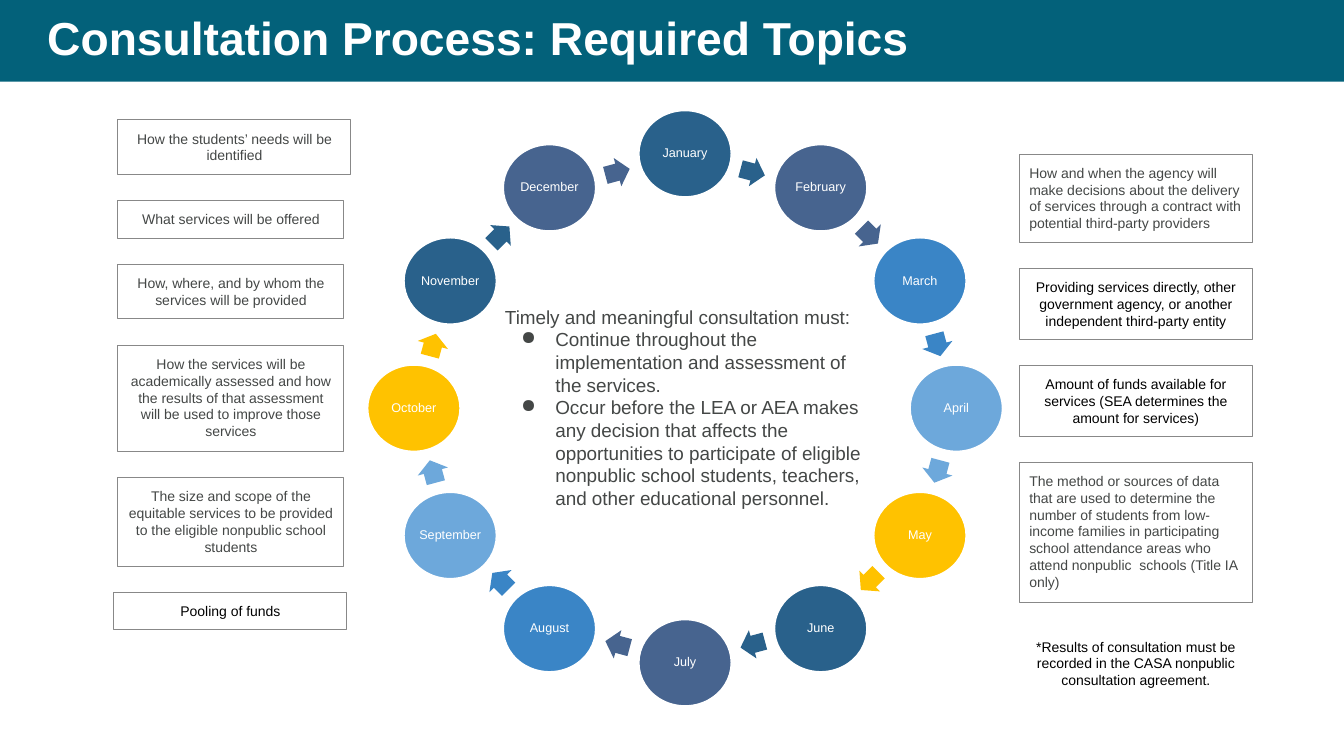
import math

from lxml import etree
from pptx import Presentation
from pptx import util as u
from pptx.dml.color import RGBColor
from pptx.enum import shapes, text
from pptx.oxml.ns import qn

PX = 9144  # 100 px to the inch
FONT = "Arial"
COLORS = {"teal": "03617A", "white": "FFFFFF", "black": "000000",
          "gray": "444746", "border": "888888", "navy": "29618B",
          "slate": "47648F", "blue": "3A85C6", "sky": "6DA8DB", "gold": "FFC200"}
CYCLE = ["navy", "slate", "blue", "sky", "gold"]
MONTHS = ["January", "February", "March", "April", "May", "June", "July",
          "August", "September", "October", "November", "December"]
CENTER, LEFT = text.PP_ALIGN.CENTER, text.PP_ALIGN.LEFT
MIDDLE, TOP = text.MSO_ANCHOR.MIDDLE, text.MSO_ANCHOR.TOP
BOX_PAD, LINE_HEIGHT = 20, 17

# Each topic: text, number of lines, format, and (x offset, width)
TOPICS_LEFT = [
    ("How the students’ needs will be identified", 2, {}, (4, 231)),
    ("What services will be offered", 1, {}, (4, 224)),
    ("How, where, and by whom the services will be provided", 2, {}, (4, 224)),
    ("How the services will be academically assessed and how the results of "
     "that assessment will be used to improve those services", 5, {}, (4, 224)),
    ("The size and scope of the equitable services to be provided to the "
     "eligible nonpublic school students", 4, {}, (4, 224)),
    ("Pooling of funds", 1, {"color": "black"}, (0, 231)),
]
TOPICS_RIGHT = [
    ("How and when the agency will make decisions about the delivery of services "
     "through a contract with potential third-party providers",
     4, {"align": LEFT}, (0, 231)),
    ("Providing services directly, other government agency, or another "
     "independent third-party entity", 3, {"color": "black"}, (0, 231)),
    ("Amount of funds available for services (SEA determines the amount for "
     "services)", 3, {"color": "black"}, (0, 231)),
    ("The method or sources of data that are used to determine the number of "
     "students from low-income families in participating school attendance areas "
     "who attend nonpublic  schools (Title IA only)", 7, {"align": LEFT}, (0, 231)),
    ("*Results of consultation must be recorded in the CASA nonpublic "
     "consultation agreement.", 3, {"color": "black", "border": None}, (0, 231)),
]
CONSULTATION_RULES = [
    "Continue throughout the implementation and assessment of the services.",
    "Occur before the LEA or AEA makes any decision that affects the opportunities "
    "to participate of eligible nonpublic school students, teachers, and other "
    "educational personnel.",
]


def rgb(name):
    return RGBColor.from_string(COLORS[name])


def add_part(slide, kind, x, y, w, h, fill=None, border=None, weight=0.75):
    sp = slide.shapes.add_shape(kind, *(round(v * PX) for v in (x, y, w, h)))
    sp.shadow.inherit = False
    if fill:
        sp.fill.solid()
        sp.fill.fore_color.rgb = rgb(fill)
    else:
        sp.fill.background()
    if border:
        sp.line.color.rgb = rgb(border)
        sp.line.width = u.Pt(weight)
    else:
        sp.line.fill.background()
    return sp


def write(sp, paragraphs, size=10, color="gray", bold=False, align=CENTER,
          anchor=TOP, pad=(10, 10), spacing=None):
    tf = sp.text_frame
    tf.word_wrap = True
    tf.vertical_anchor = anchor
    tf.margin_left = tf.margin_right = pad[0] * PX
    tf.margin_top = tf.margin_bottom = pad[1] * PX
    for i, line in enumerate(paragraphs):
        p = tf.paragraphs[0] if i == 0 else tf.add_paragraph()
        p.alignment = align
        if spacing:
            p.line_spacing = spacing
        r = p.add_run()
        r.text = line
        r.font.name, r.font.size, r.font.bold = FONT, u.Pt(size), bold
        r.font.color.rgb = rgb(color)
    return tf


def add_bullet(p):
    pPr = p._p.get_or_add_pPr()
    pPr.set("marL", str(50 * PX))
    pPr.set("indent", str(-34 * PX))
    etree.SubElement(pPr, qn("a:buChar")).set("char", "●")


def title_bar(slide, x, y, w, h):
    add_part(slide, shapes.MSO_SHAPE.RECTANGLE, x, y, w, h, fill="teal")
    sp = slide.shapes.add_textbox(*(v * PX for v in (x + 37, y, w - 101, h)))
    write(sp, ["Consultation Process: Required Topics"], size=33, color="white",
          bold=True, align=LEFT, anchor=MIDDLE, pad=(10, 5), spacing=0.9)


def topic_column(slide, topics, x, y, h):
    """Stack boxes sized by their line counts, with equal gaps filling h."""
    heights = [BOX_PAD + LINE_HEIGHT * lines for _, lines, _, _ in topics]
    gap = (h - sum(heights)) / (len(topics) - 1)
    for (topic, _, style, (dx, w)), height in zip(topics, heights):
        style = dict(style)
        border = style.pop("border", "border")
        sp = add_part(slide, shapes.MSO_SHAPE.RECTANGLE, x + dx, y, w, height,
                      border=border)
        write(sp, [topic], **style)
        y += height + gap


def month_ring(slide, x, y, w, h):
    disc_w, disc_h = 93, 87
    cx, cy = x + w / 2, y + h / 2
    step = 360 / len(MONTHS)

    def on_ring(degrees, inset, part_w, part_h):
        a = math.radians(degrees)
        rx, ry = (w - disc_w) / 2 - inset, (h - disc_h) / 2 - inset
        return (cx + rx * math.sin(a) - part_w / 2,
                cy - ry * math.cos(a) - part_h / 2, part_w, part_h)

    for i, month in enumerate(MONTHS):
        fill = CYCLE[i % len(CYCLE)]
        disc = add_part(slide, shapes.MSO_SHAPE.OVAL,
                        *on_ring(i * step, 0, disc_w, disc_h),
                        fill=fill, border="white", weight=2)
        write(disc, [month], size=9, color="white", anchor=MIDDLE, pad=(1, 1),
              spacing=0.9)
        # Arrow halfway to the next month
        size = (23, 31) if i % 6 in (1, 2, 3) else (25, 29)
        arrow = add_part(slide, shapes.MSO_SHAPE.RIGHT_ARROW,
                         *on_ring((i + 0.5) * step, 10, *size), fill=fill)
        arrow.adjustments[0], arrow.adjustments[1] = 0.6, 0.5
        arrow.rotation = (i + 0.5) * step


def consultation_text(slide, x, y, w, h):
    sp = slide.shapes.add_textbox(*(v * PX for v in (x, y, w, h)))
    tf = write(sp, ["Timely and meaningful consultation must:", *CONSULTATION_RULES],
               size=13.5, align=LEFT)
    for p in tf.paragraphs[1:]:
        add_bullet(p)


def main():
    prs = Presentation()
    prs.slide_width, prs.slide_height = 1333 * PX, 750 * PX
    slide = prs.slides.add_slide(prs.slide_layouts[6])
    title_bar(slide, 0, 0, 1333, 81)
    topic_column(slide, TOPICS_LEFT, 113, 119, 506)
    topic_column(slide, TOPICS_RIGHT, 1011, 153, 541)
    month_ring(slide, 364, 109, 631, 592)
    consultation_text(slide, 491, 293, 378, 225)
    prs.save("out.pptx")


if __name__ == "__main__":
    main()
